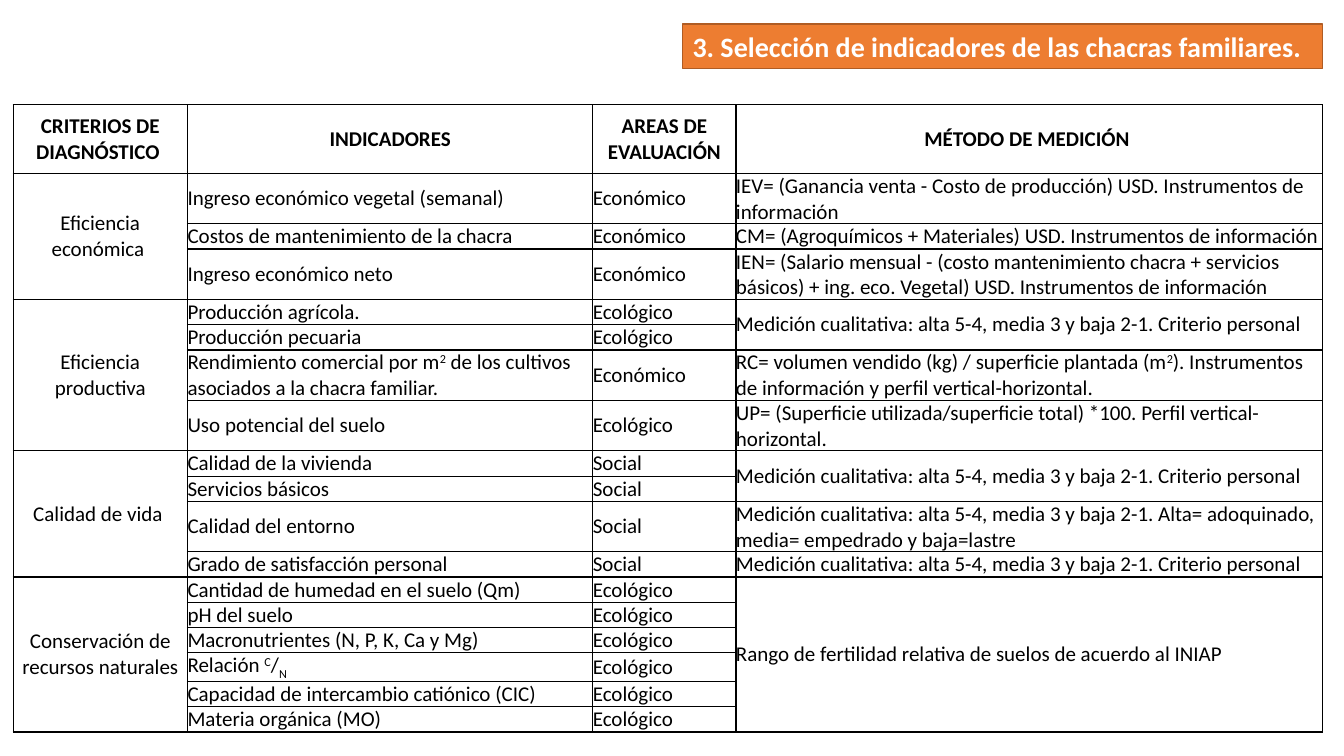
from dataclasses import dataclass

from lxml.etree import SubElement
from pptx import Presentation
from pptx.dml.color import RGBColor
from pptx.enum.shapes import MSO_SHAPE
from pptx.enum.text import MSO_ANCHOR, MSO_AUTO_SIZE, PP_ALIGN
from pptx.oxml.ns import qn
from pptx.slide import Slide
from pptx.table import Table, _Cell
from pptx.text.text import TextFrame
from pptx.util import Inches, Pt

FONT = "Calibri"
BLACK = "000000"
WHITE = "FFFFFF"
ORANGE = "ED7D31"
DARK_ORANGE = "AF5C24"
BASELINES = {"^": "30000", "_": "-25000"}
HEADERS = ["CRITERIOS DE DIAGNÓSTICO ", "INDICADORES", "AREAS DE EVALUACIÓN", "MÉTODO DE MEDICIÓN "]
COLUMN_WIDTHS = [1.73, 4.02, 1.42, 5.82]
HEADER_HEIGHT = 0.68
LINE_HEIGHT = 0.25
QUALITATIVE = "Medición cualitativa: alta 5-4, media 3 y baja 2-1. Criterio personal"
FERTILITY = "Rango de fertilidad relativa de suelos de acuerdo al INIAP"


@dataclass
class Indicator:
    name: str
    area: str
    method: str = ""
    lines: int = 1
    method_rows: int = 1


@dataclass
class Criterion:
    name: str
    indicators: list[Indicator]


CRITERIA = [
    Criterion("Eficiencia económica ", [
        Indicator("Ingreso económico vegetal (semanal)", "Económico",
                  "IEV= (Ganancia venta - Costo de producción) USD. Instrumentos de información", 2),
        Indicator("Costos de mantenimiento de la chacra", "Económico",
                  "CM= (Agroquímicos + Materiales) USD. Instrumentos de información"),
        Indicator("Ingreso económico neto", "Económico",
                  "IEN= (Salario mensual - (costo mantenimiento chacra + servicios básicos)"
                  " + ing. eco. Vegetal) USD. Instrumentos de información", 2),
    ]),
    Criterion("Eficiencia productiva", [
        Indicator("Producción agrícola.", "Ecológico", QUALITATIVE, method_rows=2),
        Indicator("Producción pecuaria", "Ecológico"),
        Indicator("Rendimiento comercial por m|^2| de los cultivos asociados a la chacra familiar.", "Económico",
                  "RC= volumen vendido (kg) / superficie plantada (m|^2|)."
                  " Instrumentos de información y perfil vertical-horizontal.", 2),
        Indicator("Uso potencial del suelo", "Ecológico",
                  "UP= (Superficie utilizada/superficie total) *100. Perfil vertical-horizontal.", 2),
    ]),
    Criterion("Calidad de vida ", [
        Indicator("Calidad de la vivienda", "Social", QUALITATIVE, method_rows=2),
        Indicator("Servicios básicos", "Social"),
        Indicator("Calidad del entorno", "Social",
                  "Medición cualitativa: alta 5-4, media 3 y baja 2-1."
                  " Alta= adoquinado, media= empedrado y baja=lastre", 2),
        Indicator("Grado de satisfacción personal", "Social", QUALITATIVE),
    ]),
    Criterion("Conservación de recursos naturales", [
        Indicator("Cantidad de humedad en el suelo (Qm)", "Ecológico", FERTILITY, method_rows=6),
        Indicator("pH del suelo", "Ecológico"),
        Indicator("Macronutrientes (N, P, K, Ca y Mg)", "Ecológico"),
        Indicator("Relación |^C|/|_N", "Ecológico"),
        Indicator("Capacidad de intercambio catiónico (CIC)", "Ecológico"),
        Indicator("Materia orgánica (MO)", "Ecológico"),
    ]),
]


def color(value: str) -> RGBColor:
    return RGBColor.from_string(value)


def write_text(frame: TextFrame, text: str, *, size: float = 15, font_color: str = BLACK,
               bold: bool = False, align: PP_ALIGN = PP_ALIGN.LEFT) -> None:
    paragraph = frame.paragraphs[0]
    paragraph.alignment = align
    for piece in text.split("|"):
        baseline = BASELINES.get(piece[:1])
        run = paragraph.add_run()
        run.text = piece[1:] if baseline else piece
        run.font.name = FONT
        run.font.size = Pt(size)
        run.font.bold = bold
        run.font.color.rgb = color(font_color)
        if baseline:
            run._r.get_or_add_rPr().set("baseline", baseline)


def format_cell(cell: _Cell) -> None:
    cell.margin_left = cell.margin_right = cell.margin_top = cell.margin_bottom = 0
    cell.vertical_anchor = MSO_ANCHOR.MIDDLE
    properties = cell._tc.get_or_add_tcPr()
    for side in ("a:lnL", "a:lnR", "a:lnT", "a:lnB"):
        border = SubElement(properties, qn(side), w=str(Pt(1)))
        fill = SubElement(border, qn("a:solidFill"))
        SubElement(fill, qn("a:srgbClr"), val=BLACK)
    cell.fill.background()


def merge_down(table: Table, row: int, column: int, count: int) -> None:
    if count > 1:
        table.cell(row, column).merge(table.cell(row + count - 1, column))


def add_title(slide: Slide) -> None:
    title = slide.shapes.add_shape(MSO_SHAPE.RECTANGLE, Inches(6.77), Inches(0.24), Inches(6.35), Inches(0.44))
    title.shadow.inherit = False
    title.fill.solid()
    title.fill.fore_color.rgb = color(ORANGE)
    title.line.color.rgb = color(DARK_ORANGE)
    title.line.width = Pt(1)
    title.text_frame.word_wrap = False
    title.text_frame.auto_size = MSO_AUTO_SIZE.SHAPE_TO_FIT_TEXT
    write_text(title.text_frame, "3. Selección de indicadores de las chacras familiares.",
               size=20, font_color=WHITE, bold=True)


def add_indicator_table(slide: Slide) -> None:
    indicators = [indicator for criterion in CRITERIA for indicator in criterion.indicators]
    heights = [HEADER_HEIGHT] + [LINE_HEIGHT * indicator.lines for indicator in indicators]
    table = slide.shapes.add_table(len(heights), len(HEADERS), Inches(0.13), Inches(1.04),
                                   Inches(sum(COLUMN_WIDTHS)), Inches(sum(heights))).table
    table.first_row = False
    table.horz_banding = False
    for column, width in zip(table.columns, COLUMN_WIDTHS):
        column.width = Inches(width)
    for row, height in zip(table.rows, heights):
        row.height = Inches(height)
    for cell in table.iter_cells():
        format_cell(cell)

    for column, header in enumerate(HEADERS):
        write_text(table.cell(0, column).text_frame, header, bold=True, align=PP_ALIGN.CENTER)
    row = 1
    for criterion in CRITERIA:
        merge_down(table, row, 0, len(criterion.indicators))
        write_text(table.cell(row, 0).text_frame, criterion.name, align=PP_ALIGN.CENTER)
        for indicator in criterion.indicators:
            write_text(table.cell(row, 1).text_frame, indicator.name)
            write_text(table.cell(row, 2).text_frame, indicator.area)
            if indicator.method:
                merge_down(table, row, 3, indicator.method_rows)
                write_text(table.cell(row, 3).text_frame, indicator.method)
            row += 1


def main() -> None:
    presentation = Presentation()
    presentation.slide_width = Inches(13.33)
    presentation.slide_height = Inches(7.5)
    slide = presentation.slides.add_slide(presentation.slide_layouts[6])
    add_title(slide)
    add_indicator_table(slide)
    presentation.save("out.pptx")


if __name__ == "__main__":
    main()
